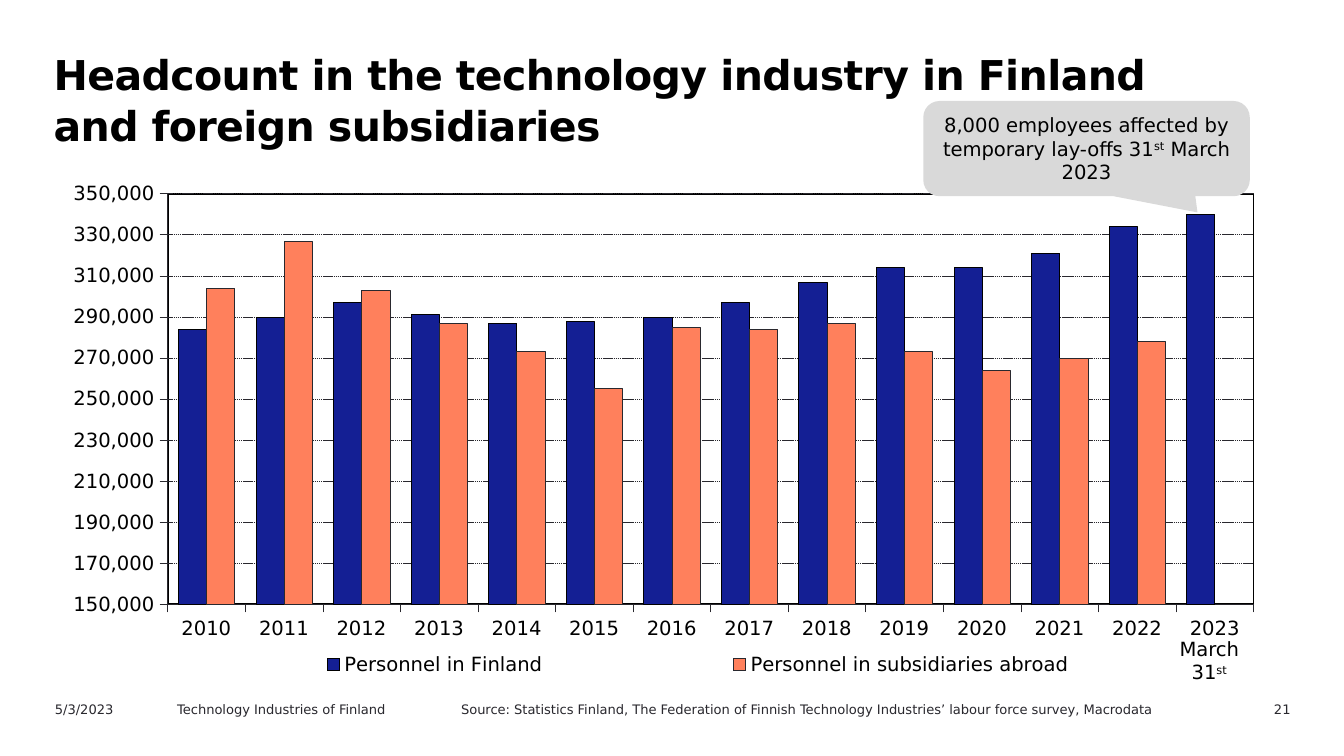
from lxml.etree import SubElement
from pptx import Presentation
from pptx.chart.data import CategoryChartData
from pptx.dml.color import RGBColor
from pptx.enum.chart import XL_CHART_TYPE, XL_LEGEND_POSITION, XL_TICK_MARK
from pptx.enum.dml import MSO_LINE
from pptx.enum.shapes import MSO_SHAPE
from pptx.enum.text import MSO_ANCHOR, MSO_AUTO_SIZE, PP_ALIGN
from pptx.oxml import parse_xml
from pptx.oxml.ns import nsdecls, qn
from pptx.util import Cm, Pt

COLORS = {
    "black": "000000",
    "ink": "29282E",
    "navy": "141F94",
    "coral": "FF805C",
    "grey": "D9D9D9",
}
FONT = "DejaVu Sans"

YEARS = [str(year) for year in range(2010, 2024)]
HEADCOUNT = {
    "Personnel in Finland": (
        "navy", "black",
        [284000, 290000, 297000, 291000, 287000, 288000, 290000,
         297000, 307000, 314000, 314000, 321000, 334000, 340000]),
    "Personnel in subsidiaries abroad": (
        "coral", "ink",
        [304000, 327000, 303000, 287000, 273000, 255000, 285000,
         284000, 287000, 273000, 264000, 270000, 278000, None]),
}


def color(name):
    return RGBColor.from_string(COLORS[name])


class SlideBuilder:
    def __init__(self, slide):
        self.slide = slide

    def place(self, shape, left, top, width, height):
        shape.left, shape.top = Cm(left), Cm(top)
        shape.width, shape.height = Cm(width), Cm(height)

    def style(self, font, size, ink="black", bold=False):
        font.name, font.size, font.bold = FONT, Pt(size), bold
        font.color.rgb = color(ink)

    def outline(self, line, ink, width=0.25):
        line.color.rgb = color(ink)
        line.width = Pt(width)

    def add_runs(self, shape, runs, size, ink="black", bold=False,
                 align=PP_ALIGN.LEFT, anchor=MSO_ANCHOR.TOP):
        frame = shape.text_frame
        frame.word_wrap = True
        frame.auto_size = MSO_AUTO_SIZE.NONE
        frame.vertical_anchor = anchor
        paragraph = frame.paragraphs[0]
        paragraph.alignment = align
        paragraph.space_before = Pt(0)
        for text, raised in runs:
            run = paragraph.add_run()
            run.text = text
            self.style(run.font, size, ink, bold)
            if raised:
                run._r.get_or_add_rPr().set("baseline", "30000")
        return paragraph

    def title(self, text, *box):
        shape = self.slide.shapes.title
        self.place(shape, *box)
        paragraph = self.add_runs(shape, [(text, False)], 22, bold=True)
        paragraph.line_spacing = Pt(27)
        paragraph._p.get_or_add_pPr().set("marL", str(Cm(0.05)))
        paragraph.runs[0]._r.get_or_add_rPr().set("spc", "-30")

    def source(self, text, *box):
        shape = self.slide.placeholders[1]
        self.place(shape, *box)
        paragraph = self.add_runs(shape, [(text, False)], 7, "ink")
        properties = paragraph._p.get_or_add_pPr()
        properties.set("marL", "0")
        properties.set("indent", "0")
        SubElement(properties, qn("a:buNone"))

    def text(self, runs, *box, size=7, ink="ink", align=PP_ALIGN.LEFT, inset=None):
        shape = self.slide.shapes.add_textbox(*map(Cm, box))
        self.add_runs(shape, runs, size, ink, align=align)
        if inset is not None:
            frame = shape.text_frame
            frame.margin_left = frame.margin_right = Cm(inset)
            frame.margin_top = frame.margin_bottom = Cm(inset)

    def callout(self, runs, *box):
        shape = self.slide.shapes.add_shape(
            MSO_SHAPE.ROUNDED_RECTANGULAR_CALLOUT, *map(Cm, box))
        shape.shadow.inherit = False
        shape.fill.solid()
        shape.fill.fore_color.rgb = color("grey")
        shape.line.fill.background()
        for index, value in enumerate((0.34, 0.67, 0.17)):
            shape.adjustments[index] = value
        self.add_runs(shape, runs, 10.5, align=PP_ALIGN.CENTER, anchor=MSO_ANCHOR.MIDDLE)

    def layout(self, parent, index, target, *box):
        for old in parent.findall(qn("c:layout")):
            parent.remove(old)
        inner = f'<c:layoutTarget val="{target}"/>' if target else ""
        inner += "".join(f'<c:{key}Mode val="edge"/>' for key in "xy")
        inner += "".join(f'<c:{key} val="{value}"/>' for key, value in zip("xywh", box))
        parent.insert(index, parse_xml(
            f'<c:layout {nsdecls("c")}><c:manualLayout>{inner}</c:manualLayout></c:layout>'))

    def chart(self, categories, groups, *box):
        data = CategoryChartData(number_format="#,##0")
        data.categories = categories
        for name, (_, _, values) in groups.items():
            data.add_series(name, values)
        chart = self.slide.shapes.add_chart(
            XL_CHART_TYPE.COLUMN_CLUSTERED, *map(Cm, box), data).chart
        chart.has_title = False
        self.style(chart.font, 10.5)

        plot = chart.plots[0]
        plot.gap_width, plot.overlap = 75, 0
        plot.vary_by_categories = False
        for series, (fill, line, _) in zip(plot.series, groups.values()):
            series.format.fill.solid()
            series.format.fill.fore_color.rgb = color(fill)
            self.outline(series.format.line, line)

        for axis in (chart.category_axis, chart.value_axis):
            axis.major_tick_mark = XL_TICK_MARK.OUTSIDE
            axis.minor_tick_mark = XL_TICK_MARK.NONE
            self.style(axis.tick_labels.font, 10.5)
            self.outline(axis.format.line, "ink")
        value_axis = chart.value_axis
        value_axis.minimum_scale, value_axis.maximum_scale = 150000, 350000
        value_axis.major_unit = 20000
        value_axis.tick_labels.number_format = "#,##0"
        value_axis.tick_labels.number_format_is_linked = False
        value_axis.has_major_gridlines = True
        grid = value_axis.major_gridlines.format.line
        self.outline(grid, "ink")
        grid.dash_style = MSO_LINE.SQUARE_DOT

        chart.has_legend = True
        chart.legend.position = XL_LEGEND_POSITION.BOTTOM
        chart.legend.include_in_layout = False
        self.style(chart.legend.font, 10.5)
        self.layout(chart.legend._element, 1, None, 0.07, 0.93, 0.9, 0.07)

        area = plot._element.getparent()
        self.layout(area, 0, "inner", 0.09, 0.06, 0.88, 0.79)
        area.append(parse_xml(
            f'<c:spPr {nsdecls("c", "a")}><a:noFill/><a:ln w="{Pt(1)}"><a:solidFill>'
            f'<a:srgbClr val="{COLORS["black"]}"/></a:solidFill></a:ln></c:spPr>'))


def main():
    presentation = Presentation()
    presentation.slide_width, presentation.slide_height = Cm(25.4), Cm(14.29)
    slide = presentation.slides.add_slide(presentation.slide_layouts[1])
    builder = SlideBuilder(slide)

    builder.title("Headcount in the technology industry in Finland and foreign subsidiaries",
                  0.71, 0.79, 22.2, 1.8)
    builder.source("Source: Statistics Finland, The Federation of Finnish Technology "
                   "Industries’ labour force survey, Macrodata",
                   8.46, 13.13, 14.22, 0.61)
    builder.text([("21", False)], 22.25, 13.13, 2.39, 0.46, align=PP_ALIGN.RIGHT)
    builder.text([("5/3/2023", False)], 0.79, 13.13, 2.54, 0.46)
    builder.text([("Technology Industries of Finland", False)], 3.1, 13.13, 4.93, 0.46)
    builder.chart(YEARS, HEADCOUNT, 1.07, 3.07, 23.32, 9.83)
    builder.callout([("8,000 employees affected by temporary lay-offs 31", False),
                     ("st", True), (" March 2023", False)],
                    17.45, 1.91, 6.17, 1.8)
    builder.text([("March 31", False), ("st", True)], 22.07, 11.94, 1.57, 1.09,
                 size=10.5, ink="black", align=PP_ALIGN.CENTER, inset=0.1)

    presentation.save("out.pptx")


if __name__ == "__main__":
    main()
